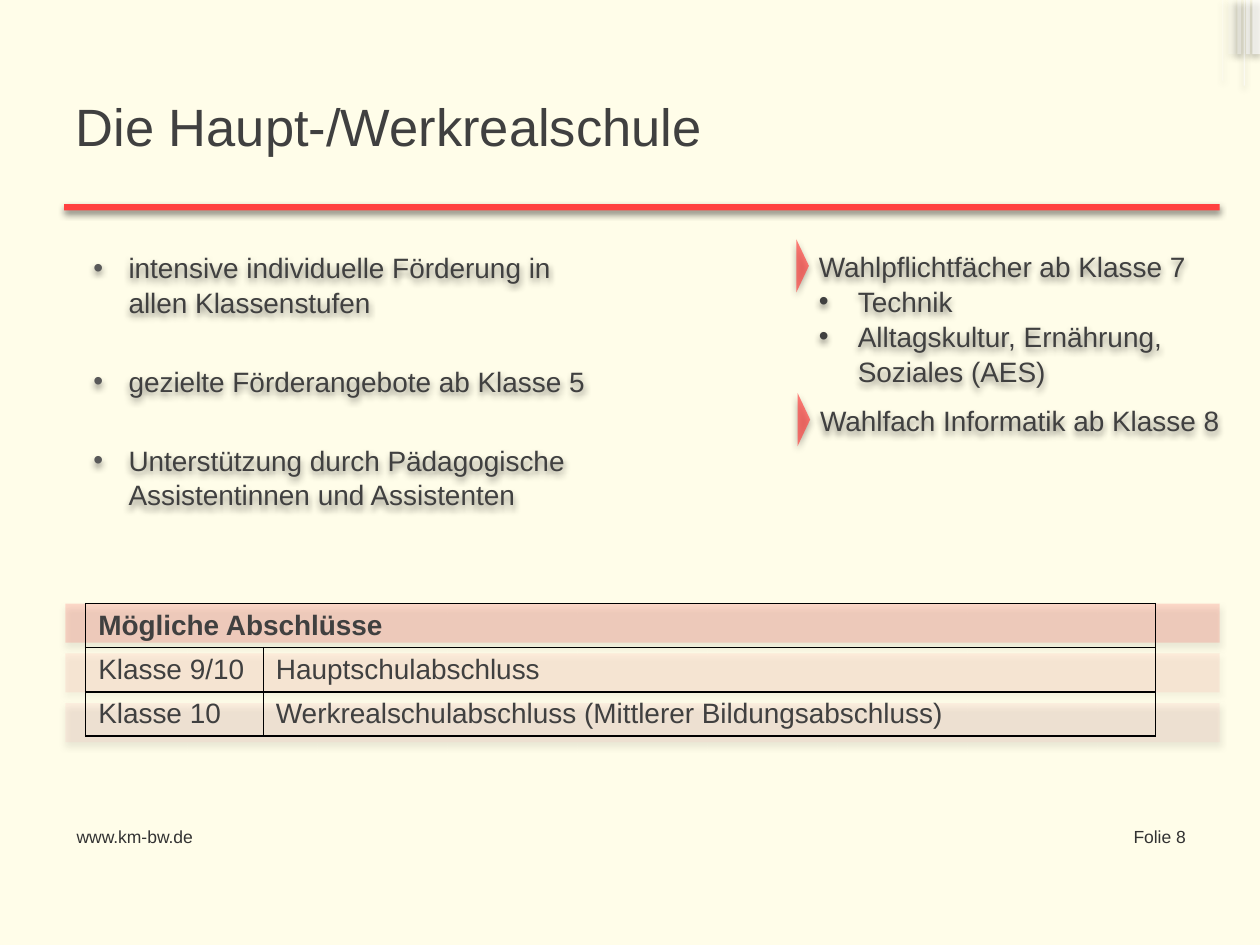
from dataclasses import dataclass

from lxml import etree
from pptx import Presentation
from pptx.dml.color import RGBColor
from pptx.enum.shapes import MSO_SHAPE
from pptx.enum.text import MSO_ANCHOR, MSO_AUTO_SIZE, PP_ALIGN
from pptx.oxml.ns import qn
from pptx.util import Inches, Pt

RECT, PENTAGON = MSO_SHAPE.RECTANGLE, MSO_SHAPE.PENTAGON
LEFT, RIGHT = PP_ALIGN.LEFT, PP_ALIGN.RIGHT
MIDDLE, TOP = MSO_ANCHOR.MIDDLE, MSO_ANCHOR.TOP
NO_FIT = MSO_AUTO_SIZE.NONE


@dataclass(frozen=True)
class Theme:
    """Colours, font and type sizes of the slide."""
    font: str = "Arial"
    background: str = "FFFDE9"
    text: str = "404040"
    footer: str = "323232"
    bullet: str = "595959"
    accent: str = "FF4040"
    bands: tuple = (("FF4040", 18), ("FF6D6D", 10), ("FFBFBF", 18))
    white: str = "FFFFFF"
    black: str = "000000"
    title_size: int = 30
    body_size: int = 16
    footer_size: int = 10
    line_spacing: float = 1.04


THEME = Theme()
CORNER_BARS = (
    (9.89, 0.03, 0.43, 65), (9.94, 0.06, 0.43, 65), (9.7, 0.01, 0.64, 30),
    (9.87, 0.01, 0.68, 60), (9.75, 0.06, 0.43, 20), (9.82, 0.03, 0.43, 40),
)
SUPPORT = (
    "intensive individuelle Förderung in allen Klassenstufen",
    "gezielte Förderangebote ab Klasse 5",
    "Unterstützung durch Pädagogische Assistentinnen und Assistenten",
)
ELECTIVES = ("Technik", "Alltagskultur, Ernährung, Soziales (AES)")
DEGREES = (
    ("Mögliche Abschlüsse", ""),
    ("Klasse 9/10", "Hauptschulabschluss"),
    ("Klasse 10", "Werkrealschulabschluss (Mittlerer Bildungsabschluss)"),
)


def add_xml(parent, tag, **attrs):
    """Append a child element and return it."""
    return etree.SubElement(parent, qn(tag), attrs)


def add_color(parent, color, opacity=100):
    """Append an RGB colour with an opacity in percent."""
    clr = add_xml(parent, "a:srgbClr", val=color)
    if opacity < 100:
        add_xml(clr, "a:alpha", val=str(opacity * 1000))


def add_shadow(shape, opacity=45):
    """Give a shape a soft shadow that falls straight down."""
    shape.shadow.inherit = False
    effects = shape._element.spPr.find(qn("a:effectLst"))
    outer = add_xml(effects, "a:outerShdw", blurRad=str(Pt(4)), dist=str(Pt(2)),
                    dir="5400000", algn="ctr", rotWithShape="0")
    add_color(outer, THEME.black, opacity)


def add_block(s, kind, box, color, opacity=100, shadow=45):
    """Add a filled shape without outline."""
    sp = s.shapes.add_shape(kind, *map(Inches, box))
    sp.fill.solid()
    sp.fill.fore_color.rgb = RGBColor.from_string(color)
    sp.line.fill.background()
    if opacity < 100:
        clr = sp._element.spPr.find(qn("a:solidFill"))[0]
        add_xml(clr, "a:alpha", val=str(opacity * 1000))
    add_shadow(sp, shadow)
    return sp


def style(p, size=THEME.body_size, color=THEME.text, bold=False, align=LEFT):
    """Set the font and alignment of a paragraph."""
    p.alignment = align
    p.font.name = THEME.font
    p.font.size = Pt(size)
    p.font.bold = bold
    p.font.color.rgb = RGBColor.from_string(color)


def add_bullet(p, margin, hang, color):
    """Give a paragraph a round bullet with a hanging indent."""
    pPr = p._p.get_or_add_pPr()
    pPr.set("marL", str(Inches(margin)))
    pPr.set("indent", str(-Inches(hang)))
    add_color(add_xml(pPr, "a:buClr"), color)
    add_xml(pPr, "a:buFont", typeface=THEME.font)
    add_xml(pPr, "a:buChar", char="•")


def next_paragraph(tf, index):
    """Return the first paragraph of a frame, or a new one."""
    return tf.paragraphs[0] if index == 0 else tf.add_paragraph()


def place(sp, box, anchor=TOP):
    """Move a shape and prepare its text frame."""
    sp.left, sp.top, sp.width, sp.height = map(Inches, box)
    tf = sp.text_frame
    tf.word_wrap = True
    tf.auto_size = NO_FIT
    tf.vertical_anchor = anchor
    return tf


def add_footer(s, box, text, align=LEFT):
    """Add a small line of footer text."""
    tf = place(s.shapes.add_textbox(0, 0, 0, 0), box)
    p = tf.paragraphs[0]
    p.text = text
    style(p, THEME.footer_size, THEME.footer, align=align)


def fill_body(sp):
    """Fill the body placeholder with the support list."""
    tf = place(sp, (0.52, 1.93, 4.72, 2.68))
    tf.margin_right = Inches(0.55)
    for i, text in enumerate(SUPPORT):
        p = next_paragraph(tf, i)
        p.text = text
        add_bullet(p, 0.4, 0.28, THEME.bullet)
        p.line_spacing = THEME.line_spacing
        p.space_before = Pt(25 if i else 0)
        style(p)
    add_shadow(sp)


def add_offer(s, x, y, width, height, heading, items=()):
    """Add a heading with a red marker and optional bulleted items."""
    sp = s.shapes.add_textbox(0, 0, 0, 0)
    tf = place(sp, (x, y, width, height))
    for i, text in enumerate((heading, *items)):
        p = next_paragraph(tf, i)
        p.text = text
        if i:
            add_bullet(p, 0.31, 0.31, THEME.text)
        p.line_spacing = THEME.line_spacing
        style(p)
    add_shadow(sp)
    marker = add_block(s, PENTAGON, (x - 0.08, y - 0.02, 0.1, 0.42), THEME.accent, 68)
    marker.adjustments[0] = 0.99


def style_cell(cell, text, bold):
    """Write a cell with black borders and no fill."""
    tcPr = cell._tc.get_or_add_tcPr()
    for side in ("a:lnL", "a:lnR", "a:lnT", "a:lnB"):
        ln = add_xml(tcPr, side, w=str(Pt(1)))
        add_color(add_xml(ln, "a:solidFill"), THEME.black)
    cell.fill.background()
    cell.margin_top = cell.margin_bottom = Inches(0.04)
    cell.vertical_anchor = MIDDLE
    p = cell.text_frame.paragraphs[0]
    p.text = text
    style(p, bold=bold)


def add_degrees(s):
    """Add the table of degrees on its coloured bands."""
    for i, (color, opacity) in enumerate(THEME.bands):
        add_block(s, RECT, (0.52, 4.79 + 0.395 * i, 9.16, 0.31), color, opacity)
    box = map(Inches, (0.68, 4.79, 8.49, 1.05))
    table = s.shapes.add_table(len(DEGREES), 2, *box).table
    table.first_row = table.horz_banding = False
    for column, width in zip(table.columns, (1.41, 7.08)):
        column.width = Inches(width)
    for i, row in enumerate(DEGREES):
        table.rows[i].height = Inches(0.35)
        for j, text in enumerate(row):
            style_cell(table.cell(i, j), text, bold=i == 0)
    table.cell(0, 0).merge(table.cell(0, 1))


def main():
    """Build the slide and save it."""
    prs = Presentation()
    prs.slide_width, prs.slide_height = Inches(10), Inches(7.5)
    s = prs.slides.add_slide(prs.slide_layouts[1])
    s.background.fill.solid()
    s.background.fill.fore_color.rgb = RGBColor.from_string(THEME.background)
    for x, width, height, opacity in CORNER_BARS:
        add_block(s, RECT, (x, 0, width, height), THEME.white, opacity, 40)
    p = place(s.shapes.title, (0.5, 0.61, 9, 0.77), MIDDLE).paragraphs[0]
    p.text = "Die Haupt-/Werkrealschule"
    style(p, THEME.title_size)
    add_block(s, RECT, (0.51, 1.62, 9.17, 0.05), THEME.accent)
    fill_body(s.placeholders[1])
    add_offer(s, 6.4, 1.92, 3.25, 1.2, "Wahlpflichtfächer ab Klasse 7", ELECTIVES)
    add_offer(s, 6.41, 3.14, 3.55, 0.42, "Wahlfach Informatik ab Klasse 8")
    add_degrees(s)
    add_footer(s, (0.51, 6.51, 1.33, 0.39), "www.km-bw.de")
    add_footer(s, (8.54, 6.51, 0.97, 0.39), "Folie 8", RIGHT)
    prs.save("out.pptx")


if __name__ == "__main__":
    main()
